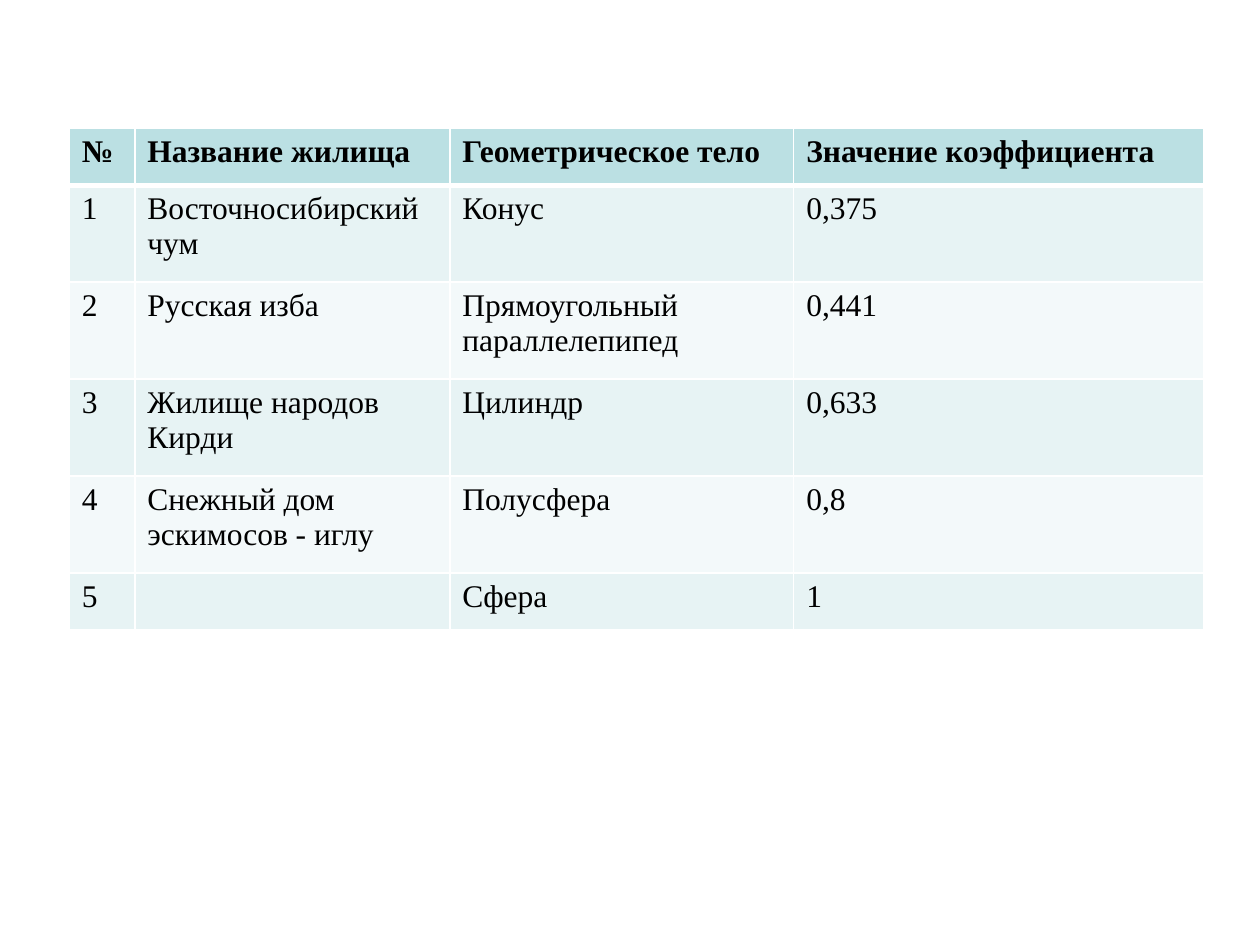
from lxml import etree
from pptx import Presentation
from pptx.dml.color import RGBColor
from pptx.oxml.ns import qn
from pptx.util import Inches, Pt

FONT = "Times New Roman"
WHITE, BLACK = "FFFFFF", "000000"
HEADER_FILL = "BBE0E3"
BAND_FILLS = ("F3F9FA", "E7F3F4")
COLUMN_WIDTHS = (0.52, 2.5, 2.73, 3.25)
ROW_HEIGHTS = (0.45, 0.77, 0.77, 0.77, 0.77, 0.45)
DWELLINGS = (
    ("№", "Название жилища", "Геометрическое тело", "Значение коэффициента"),
    ("1", "Восточносибирский чум", "Конус", "0,375"),
    ("2", "Русская изба", "Прямоугольный параллелепипед", "0,441"),
    ("3", "Жилище народов Кирди", "Цилиндр", "0,633"),
    ("4", "Снежный дом эскимосов - иглу", "Полусфера", "0,8"),
    ("5", "", "Сфера", "1"),
)


def rgb(value):
    """Return the colour for a hex string."""
    return RGBColor.from_string(value)


def set_borders(cell, widths):
    """Draw white left, right, top and bottom borders of the given widths."""
    tcPr = cell._tc.get_or_add_tcPr()
    for side, width in zip("LRTB", widths):
        ln = etree.SubElement(tcPr, qn(f"a:ln{side}"), w=str(Pt(width)))
        fill = etree.SubElement(ln, qn("a:solidFill"))
        etree.SubElement(fill, qn("a:srgbClr"), val=WHITE)


def format_cell(cell, text, row):
    """Fill a cell with text and style it by its row."""
    header = row == 0
    set_borders(cell, (1, 1, 3 if row == 1 else 1, 3 if header else 1))
    cell.fill.solid()
    cell.fill.fore_color.rgb = rgb(HEADER_FILL if header else BAND_FILLS[row % 2])
    if not text:
        return
    cell.text_frame.text = text
    font = cell.text_frame.paragraphs[0].runs[0].font
    font.name, font.size, font.bold = FONT, Pt(18), header
    font.color.rgb = rgb(BLACK)


def add_dwelling_table(slide):
    """Add the table of dwellings and their coefficients."""
    table = slide.shapes.add_table(
        len(ROW_HEIGHTS), len(COLUMN_WIDTHS), Inches(0.55), Inches(1.02),
        Inches(sum(COLUMN_WIDTHS)), Inches(sum(ROW_HEIGHTS))).table
    for column, width in zip(table.columns, COLUMN_WIDTHS):
        column.width = Inches(width)
    for row, height in zip(table.rows, ROW_HEIGHTS):
        row.height = Inches(height)
    for i, texts in enumerate(DWELLINGS):
        for j, text in enumerate(texts):
            format_cell(table.cell(i, j), text, i)


def main():
    """Build the slide and save it."""
    prs = Presentation()
    prs.slide_width, prs.slide_height = Inches(10), Inches(7.5)
    slide = prs.slides.add_slide(prs.slide_layouts[6])
    add_dwelling_table(slide)
    prs.save("out.pptx")


if __name__ == "__main__":
    main()
